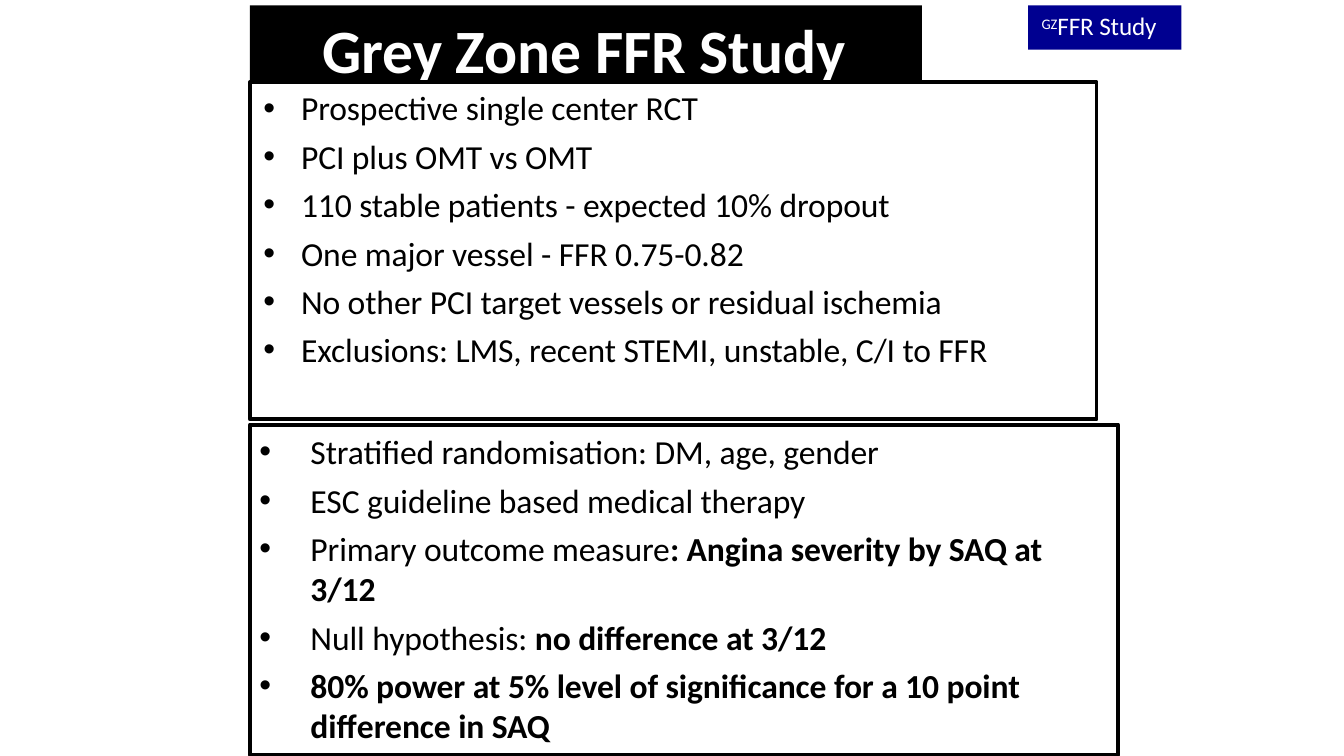
from pptx import Presentation, util as u
from pptx.dml.color import RGBColor
from pptx.enum import shapes, text
from pptx.oxml.ns import qn
from lxml import etree

BLACK, WHITE, NAVY = "000000", "FFFFFF", "000090"
DESIGN = ["Prospective single center RCT",
          "PCI plus OMT vs OMT",
          "110 stable patients - expected 10% dropout",
          "One major vessel - FFR 0.75-0.82",
          "No other PCI target vessels or residual ischemia",
          "Exclusions: LMS, recent STEMI, unstable, C/I to FFR"]
METHOD = ["Stratified randomisation: DM, age, gender",
          "ESC guideline based medical therapy",
          ("Primary outcome measure", ": Angina severity by SAQ at 3/12"),
          ("Null hypothesis: ", "no difference at 3/12"),
          ("", "80% power at 5% level of significance for a 10 point difference in SAQ")]


def tint(code):
    return RGBColor.from_string(code)


def apply(item, form):
    for key, value in form.items():
        setattr(item, key, value)


def place(item, box):
    apply(item, dict(zip(("left", "top", "width", "height"), map(u.Inches, box))))


def panel(slide, box, fill, line=None):
    rect = slide.shapes.add_shape(shapes.MSO_SHAPE.RECTANGLE, *map(u.Inches, box))
    rect.shadow.inherit = False
    rect.fill.solid()
    rect.fill.fore_color.rgb = tint(fill)
    if line:
        rect.line.color.rgb = tint(line)
        rect.line.width = u.Pt(2.04)
    else:
        rect.line.fill.background()


def frame(item, box, top):
    place(item, box)
    apply(item.text_frame, {
        "word_wrap": True, "auto_size": text.MSO_AUTO_SIZE.NONE,
        "vertical_anchor": text.MSO_ANCHOR.TOP, "margin_left": 0,
        "margin_right": 0, "margin_bottom": 0, "margin_top": u.Inches(top)})
    return item.text_frame


def write(para, words, size, color, bold=False):
    run = para.add_run()
    run.text = words
    apply(run.font, {"name": "Calibri", "size": u.Pt(size), "bold": bold})
    run.font.color.rgb = tint(color)
    props = run._r.get_or_add_rPr()
    props.set("spc", "-5")
    return props


def raise_top(slide, item):
    slide.shapes._spTree.append(item._element)


def header(slide, box):
    left, top, width, height = box
    panel(slide, box, BLACK)
    title = slide.shapes.title
    raise_top(slide, title)
    area = frame(title, (left + 0.54, top + 0.03, width - 1.06, 0.58), 0.02)
    para = area.paragraphs[0]
    para.alignment = text.PP_ALIGN.LEFT
    write(para, "Grey Zone FFR Study", 33, WHITE, True)


def badge(slide, box):
    left, top, width, height = box
    panel(slide, box, NAVY)
    label = slide.shapes.add_textbox(0, 0, 0, 0)
    area = frame(label, (left + 0.1, top + 0.02, width - 0.2, 0.25), 0.02)
    para = area.paragraphs[0]
    write(para, "GZ", 13.5, WHITE).set("baseline", "25000")
    write(para, "FFR Study", 13.5, WHITE)


def bullet(para, parts, left, hang, gap):
    props = para._p.get_or_add_pPr()
    props.set("marL", str(u.Inches(left)))
    props.set("indent", str(-u.Inches(hang)))
    etree.SubElement(props, qn("a:buFont")).set("typeface", "Arial")
    etree.SubElement(props, qn("a:buChar")).set("char", "•")
    para.space_before = u.Pt(gap)
    parts = (parts,) if isinstance(parts, str) else parts
    for words, bold in zip(parts, (False, True)):
        if words:
            write(para, words, 18, BLACK, bold)


def points(slide, box):
    body = slide.placeholders[1]
    raise_top(slide, body)
    area = frame(body, box, 0.08)
    para = area.paragraphs[0]
    for group, left, hang, start in ((DESIGN, 0.32, 0.28, 0), (METHOD, 0.39, 0.38, 33)):
        for num, parts in enumerate(group):
            if para is None:
                para = area.add_paragraph()
            bullet(para, parts, left, hang, 4.3 if num else start)
            para = None


def main():
    deck = Presentation()
    wide = u.Inches(10)
    apply(deck, {"slide_width": wide, "slide_height": wide * 9 // 16})
    slide = deck.slides.add_slide(deck.slide_layouts[1])
    header(slide, (1.86, 0.04, 5, 0.57))
    panel(slide, (1.86, 0.61, 6.3, 2.51), WHITE, BLACK)
    badge(slide, (7.65, 0.04, 1.14, 0.33))
    panel(slide, (1.86, 3.16, 6.46, 2.46), WHITE, BLACK)
    points(slide, (1.92, 0.57, 5.88, 4.97))
    deck.save("out.pptx")


if __name__ == "__main__":
    main()
